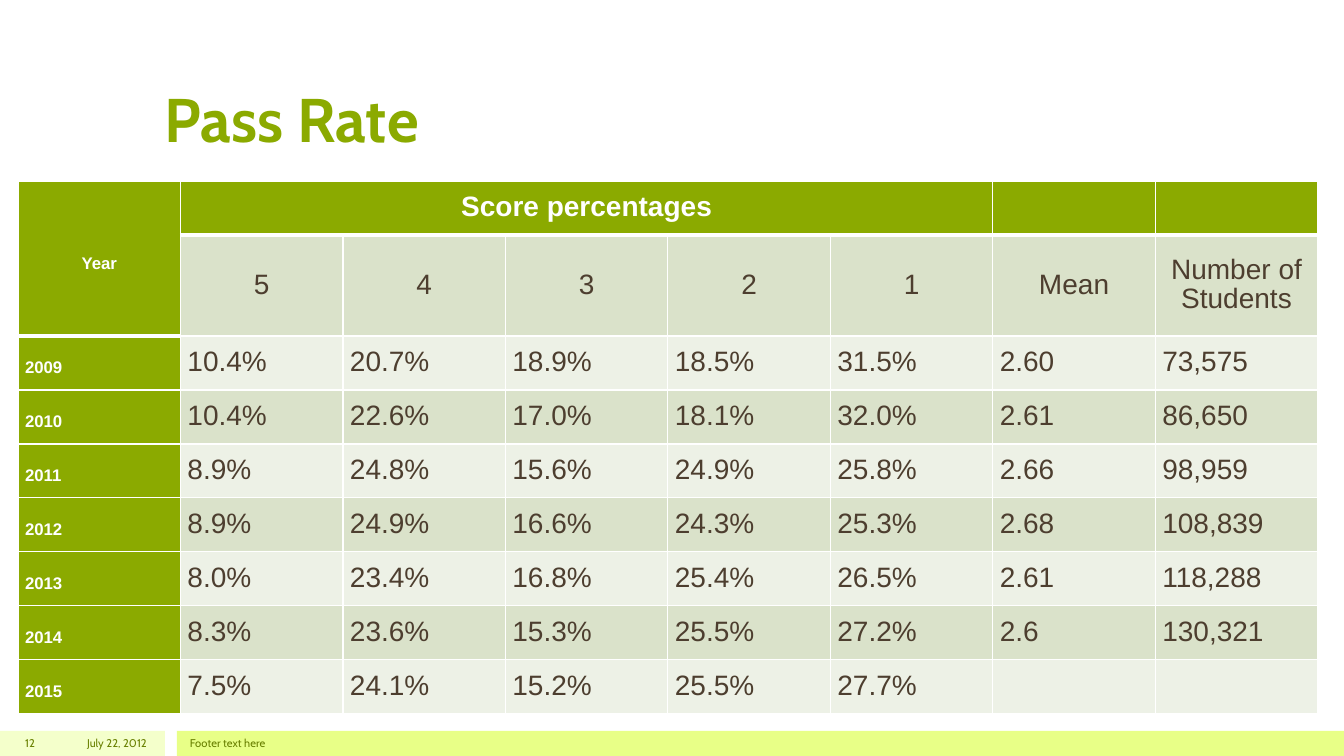
import pptx
import pptx.dml.color
import pptx.enum.shapes
import pptx.enum.text
import pptx.oxml
import pptx.oxml.ns
import pptx.util

RGB = pptx.dml.color.RGBColor
ALIGN = pptx.enum.text.PP_ALIGN
ANCHOR = pptx.enum.text.MSO_ANCHOR

GREEN = RGB(0x8B, 0xAA, 0x00)
DARK_GREEN = RGB(0x68, 0x7F, 0x00)
PALE_LIME = RGB(0xF4, 0xFF, 0xCB)
LIME = RGB(0xE8, 0xFF, 0x87)
BAND_DARK = RGB(0xDA, 0xE2, 0xCA)
BAND_LIGHT = RGB(0xED, 0xF1, 0xE6)
BROWN = RGB(0x4D, 0x3E, 0x2F)
WHITE = RGB(0xFF, 0xFF, 0xFF)

SLIDE_WIDTH, SLIDE_HEIGHT = 1344, 756
FOOTER_TOP, FOOTER_HEIGHT = 731, 25
ROW_HEIGHT, SUBHEAD_HEIGHT = 54, 101

RESULTS = [
    ["Year", "Score percentages", "", "", "", "", "", ""],
    ["", "5", "4", "3", "2", "1", "Mean", "Number of Students"],
    ["2009", "10.4%", "20.7%", "18.9%", "18.5%", "31.5%", "2.60", "73,575"],
    ["2010", "10.4%", "22.6%", "17.0%", "18.1%", "32.0%", "2.61", "86,650"],
    ["2011", "8.9%", "24.8%", "15.6%", "24.9%", "25.8%", "2.66", "98,959"],
    ["2012", "8.9%", "24.9%", "16.6%", "24.3%", "25.3%", "2.68", "108,839"],
    ["2013", "8.0%", "23.4%", "16.8%", "25.4%", "26.5%", "2.61", "118,288"],
    ["2014", "8.3%", "23.6%", "15.3%", "25.5%", "27.2%", "2.6", "130,321"],
    ["2015", "7.5%", "24.1%", "15.2%", "25.5%", "27.7%", "", ""],
]


def px(length):
    """Turn px into EMU."""
    return pptx.util.Emu(round(length * 12192000 / SLIDE_WIDTH))


def write(frame, text, *, size, color, font="Cabin", bold=False,
          align=ALIGN.LEFT, spacing=None):
    """Write one formatted paragraph into a text frame."""
    paragraph = frame.paragraphs[0]
    paragraph.alignment = align
    paragraph.line_spacing = spacing
    run = paragraph.add_run()
    run.text = text
    run.font.name = font
    run.font.size = pptx.util.Pt(size)
    run.font.bold = bold
    run.font.color.rgb = color


def add_label(slide, text, left, top, width, height, anchor=ANCHOR.MIDDLE, **style):
    """Add a wrapped text box."""
    frame = slide.shapes.add_textbox(px(left), px(top), px(width), px(height)).text_frame
    frame.word_wrap = True
    frame.vertical_anchor = anchor
    write(frame, text, **style)


def add_bar(slide, left, width, color):
    """Add a plain bar along the foot of the slide."""
    bar = slide.shapes.add_shape(
        pptx.enum.shapes.MSO_SHAPE.RECTANGLE,
        px(left), px(FOOTER_TOP), px(width), px(FOOTER_HEIGHT))
    bar.shadow.inherit = False
    bar.fill.solid()
    bar.fill.fore_color.rgb = color
    bar.line.fill.background()


def add_borders(cell, top, bottom):
    """Give a cell white borders, with top and bottom widths in points."""
    properties = cell._tc.get_or_add_tcPr()
    for side, width in (("L", 1), ("R", 1), ("T", top), ("B", bottom)):
        properties.append(pptx.oxml.parse_xml(
            f'<a:ln{side} {pptx.oxml.ns.nsdecls("a")} w="{pptx.util.Pt(width)}">'
            f'<a:solidFill><a:srgbClr val="{WHITE}"/></a:solidFill></a:ln{side}>'))


def format_cell(cell, text, row, column):
    """Style a cell by its place in the results table."""
    is_year = column == 0
    is_head = is_year or row == 0
    header_end = 1 if is_year else 0
    add_borders(cell, top=3 if row == header_end + 1 else 1,
                bottom=3 if row in (0, header_end) else 1)
    cell.fill.solid()
    band = BAND_LIGHT if row % 2 == 0 else BAND_DARK
    cell.fill.fore_color.rgb = GREEN if is_head else band
    cell.vertical_anchor = ANCHOR.MIDDLE
    cell.margin_left = cell.margin_right = px(7)
    cell.margin_top = cell.margin_bottom = px(3)
    if text:
        write(cell.text_frame, text, font="Arial", bold=is_head,
              size=12 if is_year else 20,
              color=WHITE if is_head else BROWN,
              align=ALIGN.CENTER if row < 2 else ALIGN.LEFT,
              spacing=1.55 if is_year else 0.93)


def add_results(slide):
    """Add the table of scores by year."""
    heights = [ROW_HEIGHT] * len(RESULTS)
    heights[1] = SUBHEAD_HEIGHT
    table = slide.shapes.add_table(
        len(RESULTS), len(RESULTS[0]),
        px(18), px(181), px(1300), px(sum(heights))).table
    table.first_row = table.horz_banding = False
    for row, height in zip(table.rows, heights):
        row.height = px(height)
    for row, values in enumerate(RESULTS):
        for column, text in enumerate(values):
            format_cell(table.cell(row, column), text, row, column)
    table.cell(0, 0).merge(table.cell(1, 0))
    table.cell(0, 1).merge(table.cell(0, 5))


def main():
    """Build and save the slide."""
    deck = pptx.Presentation()
    deck.slide_width, deck.slide_height = px(SLIDE_WIDTH), px(SLIDE_HEIGHT)
    slide = deck.slides.add_slide(deck.slide_layouts[6])
    add_bar(slide, 0, 165, PALE_LIME)
    add_bar(slide, 177, 1167, LIME)
    add_label(slide, "Pass Rate", 155, 30, 1033, 130, anchor=ANCHOR.BOTTOM,
              size=44, color=GREEN, bold=True)
    add_results(slide)
    for text, left, width, align in (
            ("July 22, 2012", 47, 110, ALIGN.RIGHT),
            ("Footer text here", 180, 1008, ALIGN.LEFT),
            ("12", 0, 45, ALIGN.RIGHT)):
        add_label(slide, text, left, FOOTER_TOP, width, FOOTER_HEIGHT,
                  size=8, color=DARK_GREEN, align=align)
    deck.save("out.pptx")


if __name__ == "__main__":
    main()
